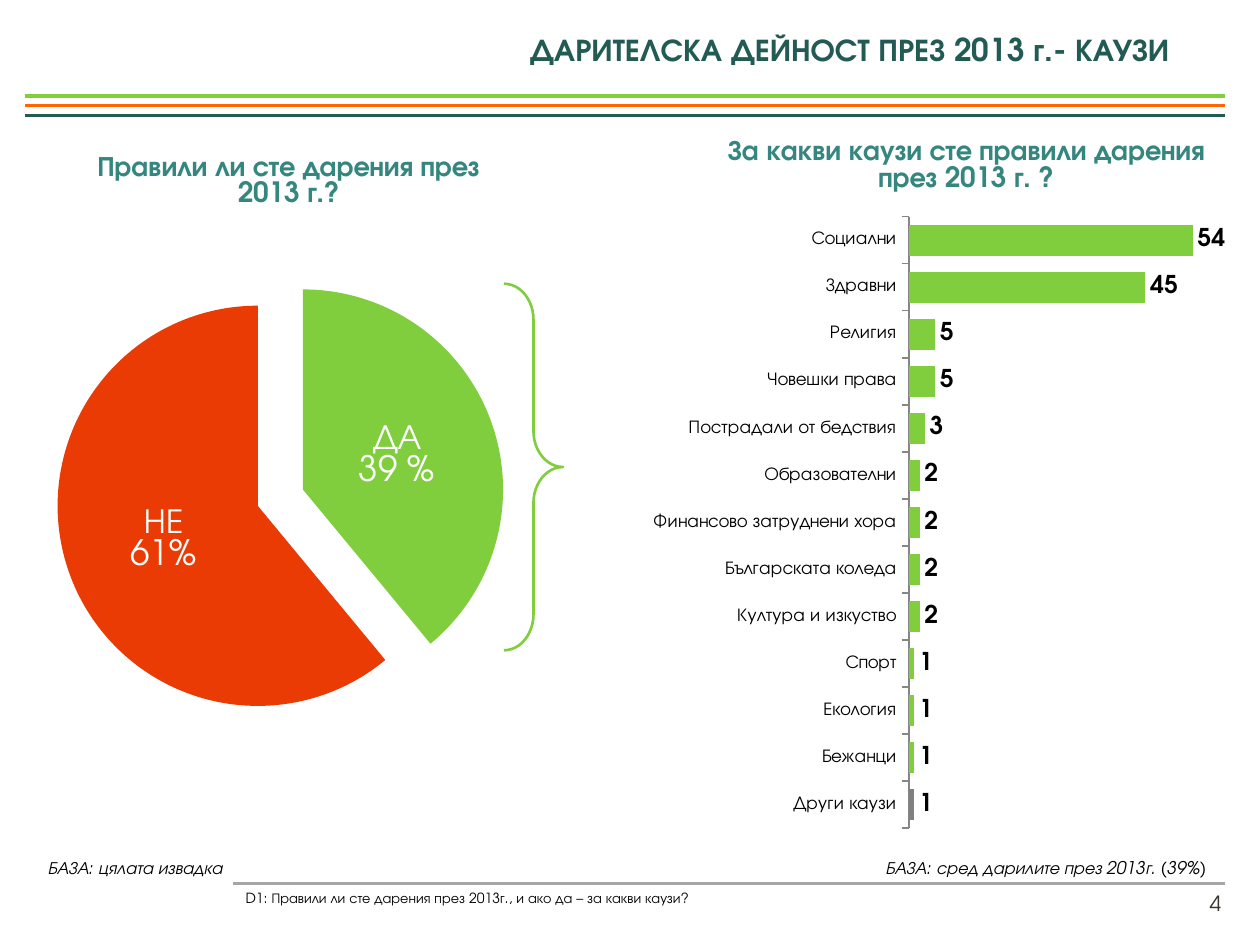
from lxml import etree
from pptx import Presentation
from pptx.chart.data import CategoryChartData as ChartData
from pptx.dml.color import RGBColor as RGB
from pptx.enum.chart import XL_CHART_TYPE as Kind
from pptx.enum.chart import XL_LABEL_POSITION as Pos
from pptx.enum.chart import XL_TICK_LABEL_POSITION as TickPos
from pptx.enum.chart import XL_TICK_MARK as Tick
from pptx.enum.shapes import MSO_CONNECTOR as Link
from pptx.enum.shapes import MSO_SHAPE as Form
from pptx.enum.text import PP_ALIGN as Align
from pptx.oxml.ns import qn
from pptx.util import Cm, Pt

FONT = "TeX Gyre Adventor"
HUES = {
    "green": "80CD3D", "orange": "FF6700", "dark": "225A54", "teal": "34867E",
    "red": "EA3B04", "gray": "A6A6A6", "other": "808080", "axis": "868686",
    "black": "000000", "white": "FFFFFF", "number": "39342D",
}
CAUSES = {
    "Социални": 54, "Здравни": 45, "Религия": 5, "Човешки права": 5,
    "Пострадали от бедствия": 3, "Образователни": 2,
    "Финансово затруднени хора": 2, "Българската коледа": 2,
    "Култура и изкуство": 2, "Спорт": 1, "Екология": 1, "Бежанци": 1,
    "Други каузи": 1,
}


def hue(name):
    return RGB.from_string(HUES[name])


def style(font, size, color="black", **more):
    look = {"name": FONT, "size": Pt(size), "bold": False, **more}
    for key, val in look.items():
        setattr(font, key, val)
    font.color.rgb = hue(color)


def paint(part, color):
    part.format.fill.solid()
    part.format.fill.fore_color.rgb = hue(color)


def add_rule(slide, left, top, color):
    line = slide.shapes.add_connector(
        Link.STRAIGHT, Cm(left), Cm(top), Cm(24.69), Cm(top))
    line.line.color.rgb = hue(color)
    line.line.width = Pt(2)
    etree.SubElement(line._element.spPr, qn("a:effectLst"))


def add_text(slide, box, text, size, color="black", wrap=True,
             align=Align.LEFT, **more):
    frame = slide.shapes.add_textbox(*map(Cm, box)).text_frame
    frame.word_wrap = wrap
    para = frame.paragraphs[0]
    para.alignment = align
    run = para.add_run()
    run.text = text
    style(run.font, size, color, **more)


def make_layout(inner=False, **spots):
    layout = etree.Element(qn("c:layout"))
    manual = etree.SubElement(layout, qn("c:manualLayout"))
    rows = {"layoutTarget": "inner"} if inner else {}
    rows |= {"xMode": "edge", "yMode": "edge", **spots}
    for key, val in rows.items():
        etree.SubElement(manual, qn(f"c:{key}"), val=str(val))
    return layout


def add_chart(slide, kind, box, title, data, plot, spot):
    """Chart with a placed title and a placed plot area."""
    source = ChartData(number_format="0")
    source.categories = list(data)
    source.add_series(title, list(data.values()))
    chart = slide.shapes.add_chart(kind, *map(Cm, box), source).chart
    style(chart.font, 18)
    chart.has_legend = False
    chart.has_title = True
    frame = chart.chart_title.text_frame
    frame.text = title
    style(frame.paragraphs[0].runs[0].font, 16, "teal", bold=True)

    head = chart.chart_title._element
    area = chart._chartSpace.chart.plotArea
    for host in (head, area):
        for old in host.findall(qn("c:layout")):
            host.remove(old)
    head.find(qn("c:overlay")).addprevious(
        make_layout(x=spot[0], y=spot[1]))
    area.insert(0, make_layout(True, **dict(zip("xywh", plot))))
    return chart


def add_pie(slide):
    chart = add_chart(
        slide, Kind.PIE, (0.51, 2.34, 10.39, 15.39),
        "Правили ли сте дарения през 2013 г.?", {"1": 39, "2": 61},
        (0.06, 0.2, 0.87, 0.6), (0.13, 0.04))
    series = chart.plots[0].series[0]
    slices = [("green", "ДА", "39 %"), ("red", "НЕ", "61%")]
    for i, (color, *words) in enumerate(slices):
        point = series.points[i]
        paint(point, color)
        label = point.data_label
        label.text_frame.text = "\n".join(words)
        for para in label.text_frame.paragraphs:
            style(para.runs[0].font, 20, "white")
        label.position = Pos.CENTER
    # Pull the slices apart
    burst = etree.Element(qn("c:explosion"), val="12")
    series._element.find(qn("c:dPt")).addprevious(burst)


def add_bars(slide):
    chart = add_chart(
        slide, Kind.BAR_CLUSTERED, (11.71, 2.51, 13, 14.33),
        "За какви каузи сте правили дарения през 2013 г. ?", CAUSES,
        (0.51, 0.13, 0.49, 0.86), (0.22, 0.01))
    plot = chart.plots[0]
    plot.gap_width = 50
    plot.vary_by_categories = False
    series = plot.series[0]
    paint(series, "green")
    paint(series.points[len(CAUSES) - 1], "other")

    labels = series.data_labels
    values = {"show_value": True, "position": Pos.OUTSIDE_END,
              "number_format": "0", "number_format_is_linked": False}
    axis = chart.category_axis
    names = {"reverse_order": True, "major_tick_mark": Tick.OUTSIDE,
             "tick_label_position": TickPos.LOW,
             "has_major_gridlines": False}
    scale = {"minimum_scale": 0, "maximum_scale": 60,
             "has_major_gridlines": False, "visible": False}
    for part, look in ((labels, values), (axis, names),
                       (chart.value_axis, scale)):
        for key, val in look.items():
            setattr(part, key, val)
    style(labels.font, 14, bold=True)
    style(axis.tick_labels.font, 10.5)
    axis.format.line.color.rgb = hue("axis")
    axis.format.line.width = Pt(0.75)


def add_brace(slide):
    brace = slide.shapes.add_shape(
        Form.RIGHT_BRACE, Cm(10.16), Cm(5.72), Cm(1.19), Cm(7.39))
    brace.shadow.inherit = False
    brace.fill.background()
    brace.line.color.rgb = hue("green")
    brace.line.width = Pt(1.5)
    brace.adjustments[0] = 0.61
    brace.adjustments[1] = 0.5


def main():
    deck = Presentation()
    deck.slide_width, deck.slide_height = Cm(25.4), Cm(19.05)
    slide = deck.slides.add_slide(deck.slide_layouts[6])

    # Header and footer rules
    for i, color in enumerate(("green", "orange", "dark")):
        add_rule(slide, 0.51, 1.93 + 0.2 * i, color)
    add_rule(slide, 4.7, 17.81, "gray")

    # Charts joined by the brace
    add_pie(slide)
    add_brace(slide)
    add_bars(slide)

    # Title, bases, question and slide number
    add_text(slide, (10.44, 0.48, 14.33, 1.02),
             "ДАРИТЕЛСКА ДЕЙНОСТ ПРЕЗ 2013 г.- КАУЗИ", 18, "dark",
             wrap=False, bold=True)
    add_text(slide, (17.6, 17.15, 7.8, 0.69),
             "БАЗА: сред дарилите през 2013г. (39%)", 10, italic=True)
    add_text(slide, (0.71, 17.15, 5.41, 0.69),
             "БАЗА: цялата извадка", 10, italic=True)
    add_text(slide, (4.7, 17.81, 19, 0.61),
             "D1: Правили ли сте дарения през 2013г., и ако да – "
             "за какви каузи?", 8)
    add_text(slide, (18.95, 17.83, 5.92, 1.02), "4", 12, "number",
             align=Align.RIGHT)
    deck.save("out.pptx")


if __name__ == "__main__":
    main()
